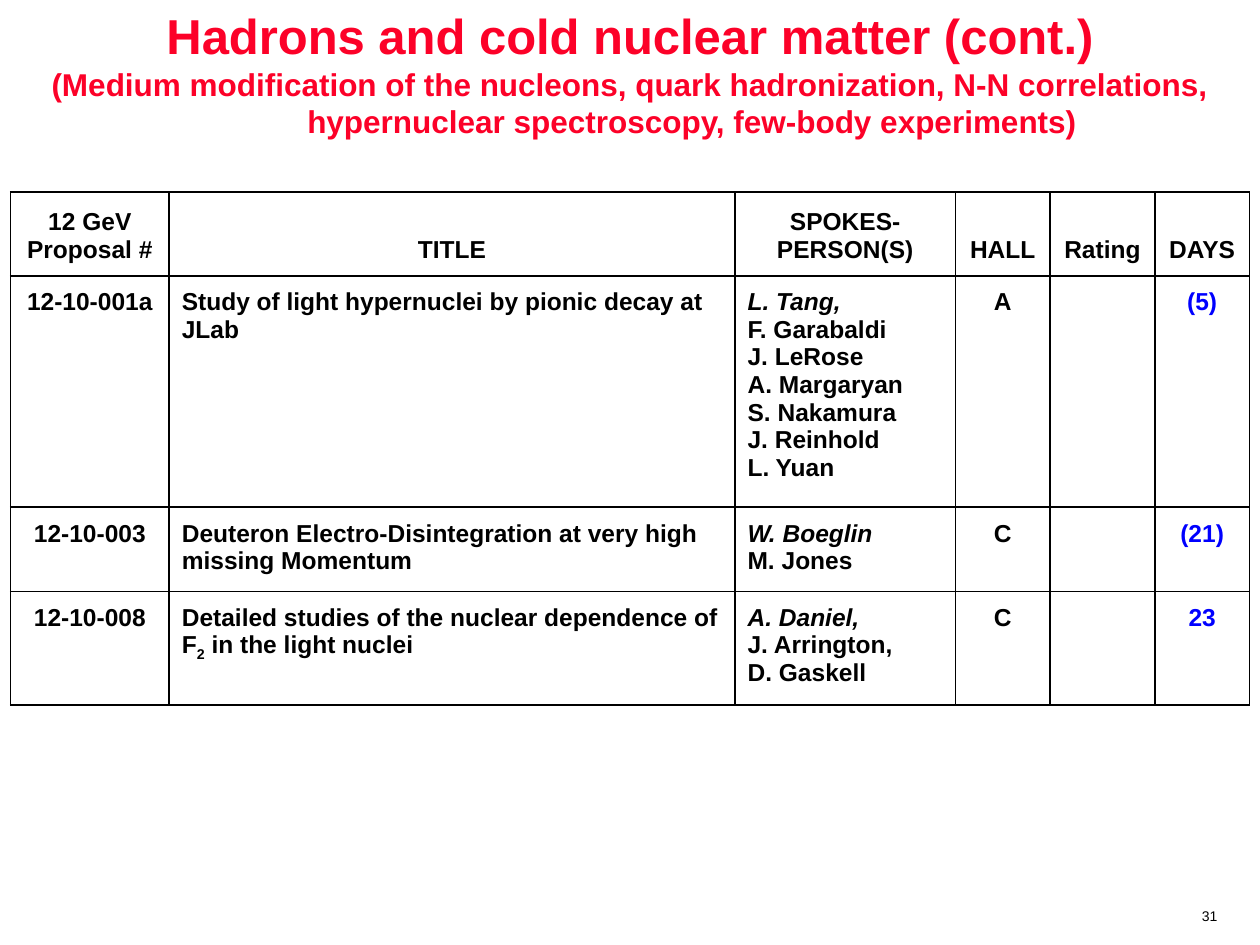
from lxml import etree
from pptx import Presentation
from pptx.dml.color import RGBColor
from pptx.enum.text import MSO_ANCHOR, PP_ALIGN
from pptx.oxml.ns import qn
from pptx.util import Pt

CENTER, LEFT = PP_ALIGN.CENTER, PP_ALIGN.LEFT
TOP, MIDDLE, BOTTOM = MSO_ANCHOR.TOP, MSO_ANCHOR.MIDDLE, MSO_ANCHOR.BOTTOM
FONT, RED, BLUE, BLACK = "Arial", "FC0128", "0000FF", "000000"

TITLE_LINES = [
    ("Hadrons and cold nuclear matter (cont.)", 28, 0),
    ("(Medium modification of the nucleons, quark hadronization, N-N correlations,", 18, -11),
    ("hypernuclear spectroscopy, few-body experiments)", 18, 71),
]
HEADERS = ["12 GeV Proposal #", "TITLE", "SPOKES-PERSON(S)", "HALL", "Rating", "DAYS"]
PROPOSALS = [
    ("12-10-001a", ["Study of light hypernuclei by pionic decay at JLab"],
     ["L. Tang,", "F. Garabaldi", "J. LeRose", "A. Margaryan", "S. Nakamura",
      "J. Reinhold", "L. Yuan"], "A", "(5)"),
    ("12-10-003", ["Deuteron Electro-Disintegration at very high missing Momentum"],
     ["W. Boeglin", "M. Jones"], "C", "(21)"),
    ("12-10-008", ["Detailed studies of the nuclear dependence of F", "2", " in the light nuclei"],
     ["A. Daniel,", "J. Arrington,", "D. Gaskell"], "C", "23"),
]
COLUMN_WIDTHS = [90.7, 323.3, 126, 54, 60, 54]
ROW_HEIGHTS = [48, 132, 48, 65]
TABLE_LEFT, TABLE_TOP = 6, 109.7


def color(value):
    return RGBColor.from_string(value)


def add_span(para, text, size, fill=BLACK, bold=True, italic=False):
    span = para.add_run()
    span.text = text
    font = span.font
    font.name, font.size, font.bold, font.italic = FONT, Pt(size), bold, italic
    font.color.rgb = color(fill)
    return span


def next_para(frame, index, align):
    para = frame.paragraphs[0] if index == 0 else frame.add_paragraph()
    para.alignment = align
    return para


def style_cell(cell, anchor):
    cell.vertical_anchor = anchor
    cell.margin_left = cell.margin_right = cell.margin_top = cell.margin_bottom = Pt(7.2)
    cell.fill.background()
    properties = cell._tc.get_or_add_tcPr()
    for index, side in enumerate(("a:lnL", "a:lnR", "a:lnT", "a:lnB")):
        line = etree.Element(qn(side), w=str(Pt(1)))
        fill = etree.SubElement(line, qn("a:solidFill"))
        etree.SubElement(fill, qn("a:srgbClr"), val=BLACK)
        properties.insert(index, line)


def fill_cell(cell, text, fill=BLACK):
    add_span(next_para(cell.text_frame, 0, CENTER), text, 14, fill)


def fill_title(cell, parts):
    para = next_para(cell.text_frame, 0, LEFT)
    for index, part in enumerate(parts):
        span = add_span(para, part, 14)
        if index == 1:
            span.font._element.set("baseline", "-25000")


def fill_people(cell, people):
    for index, person in enumerate(people):
        add_span(next_para(cell.text_frame, index, LEFT), person, 14, italic=index == 0)


def add_title(page):
    box = page.shapes.add_textbox(Pt(0), Pt(12.2), Pt(720), Pt(59))
    frame = box.text_frame
    frame.word_wrap = True
    frame.vertical_anchor = MIDDLE
    for index, (text, size, indent) in enumerate(TITLE_LINES):
        para = next_para(frame, index, CENTER)
        if indent:
            properties = para._p.get_or_add_pPr()
            properties.set("marL", "0")
            properties.set("indent", str(Pt(indent)))
        add_span(para, text, size, RED)


def add_proposals(page):
    table = page.shapes.add_table(
        len(ROW_HEIGHTS), len(COLUMN_WIDTHS), Pt(TABLE_LEFT), Pt(TABLE_TOP),
        Pt(sum(COLUMN_WIDTHS)), Pt(sum(ROW_HEIGHTS))).table
    table.first_row = table.horz_banding = False
    for column, width in zip(table.columns, COLUMN_WIDTHS):
        column.width = Pt(width)
    for index, (row, height) in enumerate(zip(table.rows, ROW_HEIGHTS)):
        row.height = Pt(height)
        for cell in row.cells:
            style_cell(cell, TOP if index else BOTTOM)
    for column, header in enumerate(HEADERS):
        fill_cell(table.cell(0, column), header)
    for row, (number, title, people, hall, days) in enumerate(PROPOSALS, 1):
        fill_cell(table.cell(row, 0), number)
        fill_title(table.cell(row, 1), title)
        fill_people(table.cell(row, 2), people)
        fill_cell(table.cell(row, 3), hall)
        fill_cell(table.cell(row, 5), days, BLUE)


def add_page_number(page):
    box = page.shapes.add_textbox(Pt(679), Pt(517), Pt(24.5), Pt(15))
    box.text_frame.word_wrap = False
    para = next_para(box.text_frame, 0, CENTER)
    para.line_spacing = 0.8
    add_span(para, "31", 8, bold=False)


def main():
    deck = Presentation()
    deck.slide_width, deck.slide_height = Pt(720), Pt(540)
    page = deck.slides.add_slide(deck.slide_layouts[6])
    add_page_number(page)
    add_proposals(page)
    add_title(page)
    deck.save("out.pptx")


if __name__ == "__main__":
    main()
